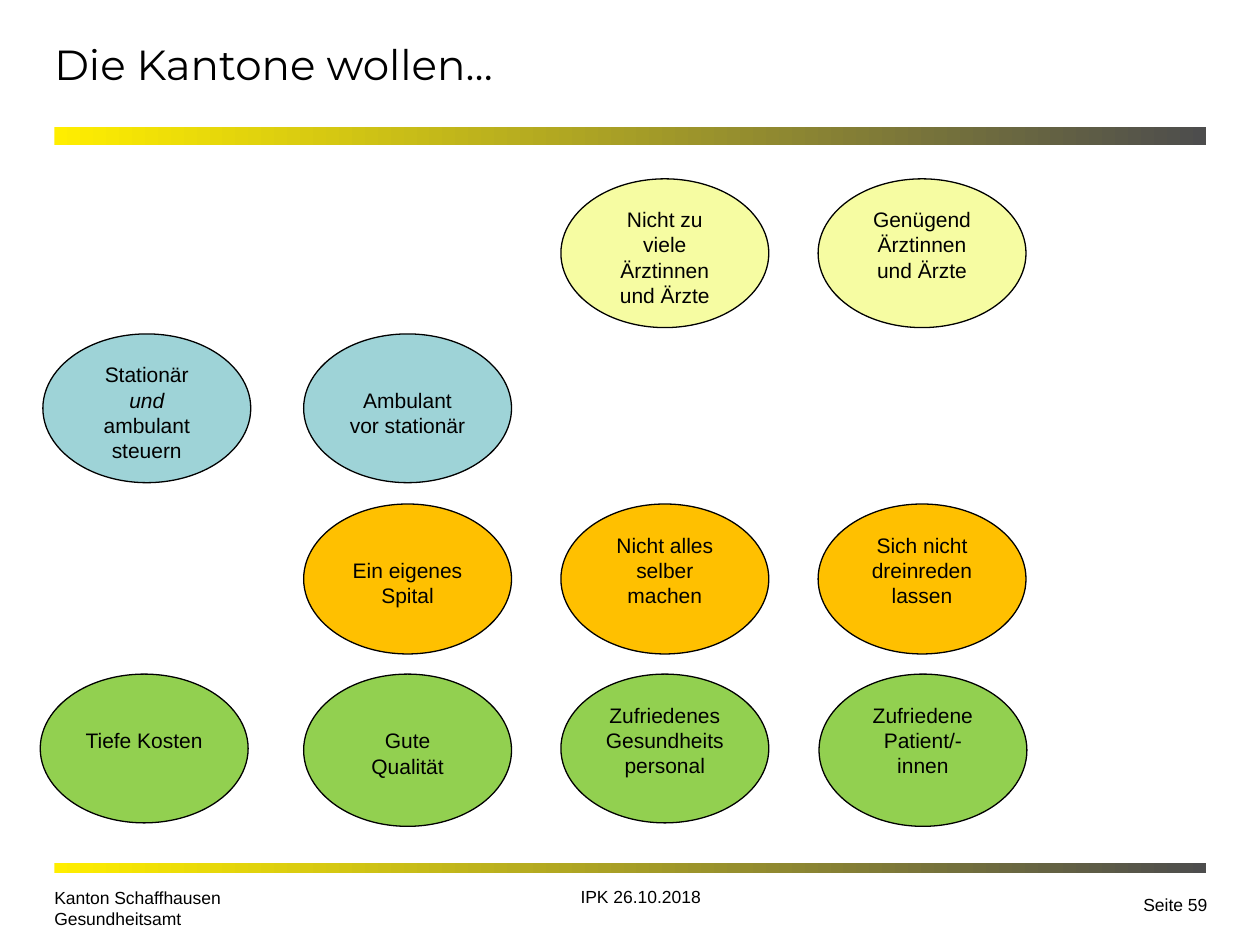
from dataclasses import dataclass

from pptx import Presentation
from pptx.dml.color import RGBColor
from pptx.enum.shapes import MSO_SHAPE as Shape
from pptx.enum.text import MSO_ANCHOR as Anchor, PP_ALIGN as Align
from pptx.slide import Slide
from pptx.text.text import TextFrame
from pptx.util import Pt

BLACK = "000000"
YELLOW, GREY = "FFEE00", "4D4D4D"
LIME, TEAL, AMBER, GREEN = "F6FCA2", "9ED3D7", "FFC000", "92D050"
COLUMNS = (24.5, 173.5, 320.5, 467.5)
BUBBLE_WIDTH = 118.8
LINE_HEIGHT = 14.4
MARGIN_LEFT = 31
BAR_WIDTH = 658


@dataclass(frozen=True)
class Run:
    text: str
    italic: bool = False


@dataclass(frozen=True)
class Row:
    top: float
    height: float
    color: str


@dataclass(frozen=True)
class Bubble:
    row: Row
    column: int
    paragraphs: tuple[tuple[Run, ...], ...]
    lowered: bool = False
    shift: float = 0
    extra_height: float = 0


@dataclass(frozen=True)
class Label:
    left: float
    top: float
    width: float
    height: float
    lines: tuple[str, ...]
    size: float = 10
    font: str = "Arial"
    align: Align = Align.LEFT
    anchor: Anchor = Anchor.TOP
    side_margin: float = 7.2


def lines(*texts: str) -> tuple[tuple[Run, ...], ...]:
    return tuple((Run(text),) for text in texts)


DOCTORS = Row(102.2, 85, LIME)
CARE = Row(190.8, 85, TEAL)
HOSPITAL = Row(288, 85.7, AMBER)
OUTCOME = Row(385.2, 85, GREEN)

BUBBLES = (
    Bubble(DOCTORS, 2, lines("Nicht zu viele Ärztinnen und Ärzte")),
    Bubble(DOCTORS, 3, lines("Genügend Ärztinnen und Ärzte")),
    Bubble(CARE, 0, ((Run("Stationär "), Run("und", True), Run(" ambulant steuern")),)),
    Bubble(CARE, 1, lines("Ambulant vor stationär"), lowered=True),
    Bubble(HOSPITAL, 1, lines("Ein eigenes Spital"), lowered=True),
    Bubble(HOSPITAL, 2, lines("Nicht alles selber machen")),
    Bubble(HOSPITAL, 3, lines("Sich nicht dreinreden lassen")),
    Bubble(OUTCOME, 0, lines("Tiefe Kosten"), lowered=True, shift=-1.5),
    Bubble(OUTCOME, 1, lines("Gute Qualität"), lowered=True, extra_height=2),
    Bubble(OUTCOME, 2, lines("Zufriedenes Gesundheitspersonal")),
    Bubble(OUTCOME, 3, lines("Zufriedene", "Patient/-innen"), shift=0.5, extra_height=2),
)

LABELS = (
    Label(MARGIN_LEFT, 0, 514, 72.7, ("Die Kantone wollen…",), size=24,
          font="Montserrat", anchor=Anchor.MIDDLE, side_margin=0),
    Label(MARGIN_LEFT, 499.7, 190.8, 34.6, ("Kanton Schaffhausen", "Gesundheitsamt"),
          anchor=Anchor.BOTTOM, side_margin=0),
    Label(252, 502.6, 228.2, 37.4, ("IPK 26.10.2018",), align=Align.CENTER),
    Label(629.3, 499.7, 67.7, 34.6, ("Seite 59",), align=Align.RIGHT, anchor=Anchor.MIDDLE),
)


def rgb(color: str) -> RGBColor:
    return RGBColor.from_string(color)


def write(frame: TextFrame, paragraphs: tuple[tuple[Run, ...], ...],
          size: float, font: str, align: Align) -> None:
    frame.word_wrap = True
    for index, runs in enumerate(paragraphs):
        paragraph = frame.add_paragraph() if index else frame.paragraphs[0]
        paragraph.alignment = align
        for item in runs:
            run = paragraph.add_run()
            run.text = item.text
            run.font.size = Pt(size)
            run.font.name = font
            run.font.italic = item.italic
            run.font.color.rgb = rgb(BLACK)


def draw_label(slide: Slide, label: Label) -> None:
    box = slide.shapes.add_textbox(
        Pt(label.left), Pt(label.top), Pt(label.width), Pt(label.height))
    frame = box.text_frame
    frame.vertical_anchor = label.anchor
    frame.margin_left = frame.margin_right = Pt(label.side_margin)
    write(frame, lines(*label.lines), label.size, label.font, label.align)


def draw_bar(slide: Slide, top: float, height: float) -> None:
    bar = slide.shapes.add_shape(
        Shape.RECTANGLE, Pt(MARGIN_LEFT), Pt(top), Pt(BAR_WIDTH), Pt(height))
    bar.shadow.inherit = False
    bar.line.fill.background()
    bar.fill.gradient()
    bar.fill.gradient_angle = 0
    for stop, color, position in zip(bar.fill.gradient_stops, (YELLOW, GREY), (0, 1)):
        stop.color.rgb = rgb(color)
        stop.position = position


def draw_bubble(slide: Slide, bubble: Bubble) -> None:
    row = bubble.row
    ellipse = slide.shapes.add_shape(
        Shape.OVAL, Pt(COLUMNS[bubble.column] + bubble.shift), Pt(row.top),
        Pt(BUBBLE_WIDTH), Pt(row.height + bubble.extra_height))
    ellipse.shadow.inherit = False
    ellipse.fill.solid()
    ellipse.fill.fore_color.rgb = rgb(row.color)
    ellipse.line.color.rgb = rgb(BLACK)
    ellipse.line.width = Pt(0.75)
    frame = ellipse.text_frame
    frame.vertical_anchor = Anchor.TOP
    frame.margin_top = Pt(3.6 + LINE_HEIGHT * bubble.lowered)
    write(frame, bubble.paragraphs, 12, "Arial", Align.CENTER)


def main() -> None:
    presentation = Presentation()
    presentation.slide_width = Pt(720)
    presentation.slide_height = Pt(540)
    slide = presentation.slides.add_slide(presentation.slide_layouts[6])
    draw_bar(slide, 72.7, 10.1)
    draw_bar(slide, 493.2, 5.4)
    for label in LABELS:
        draw_label(slide, label)
    for bubble in BUBBLES:
        draw_bubble(slide, bubble)
    presentation.save("out.pptx")


if __name__ == "__main__":
    main()
